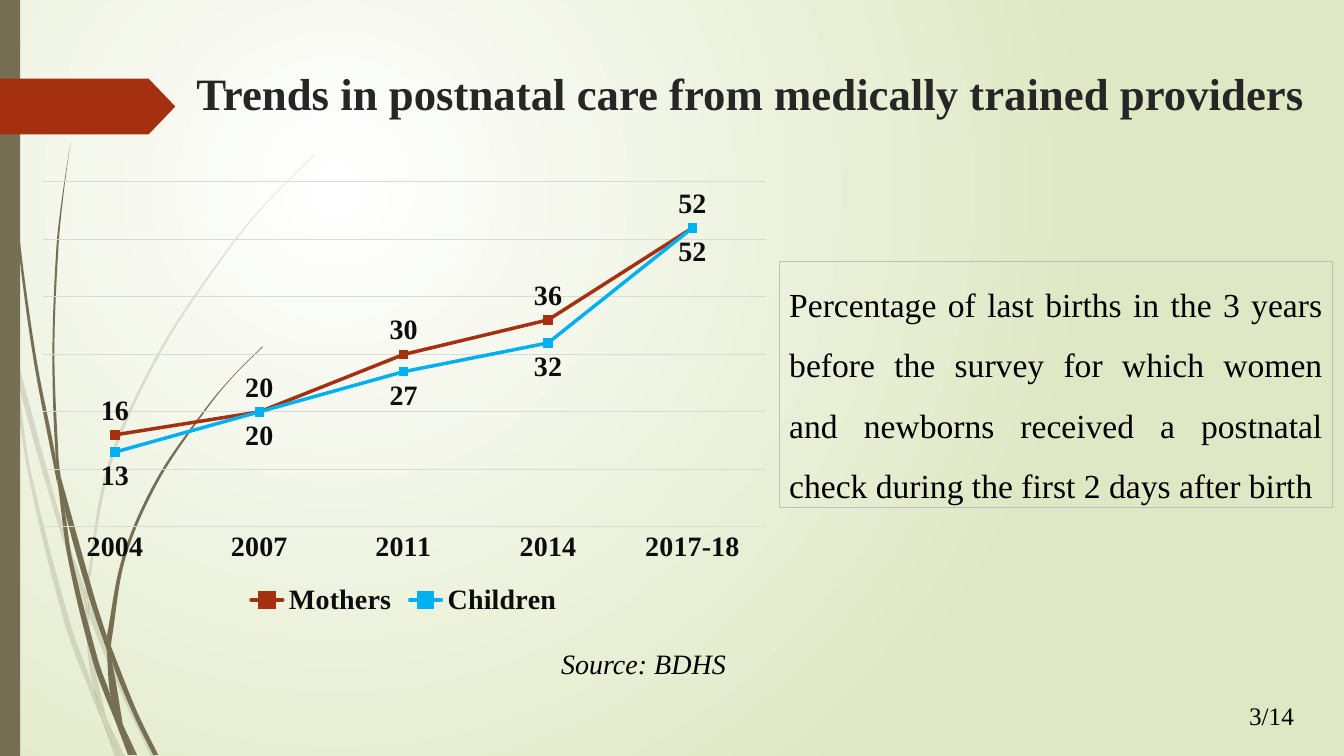
from lxml import etree
from pptx import Presentation
from pptx.chart.data import CategoryChartData
from pptx.dml.color import RGBColor
from pptx.enum.chart import (XL_CHART_TYPE, XL_LABEL_POSITION, XL_LEGEND_POSITION,
                             XL_MARKER_STYLE, XL_TICK_MARK)
from pptx.enum.shapes import MSO_SHAPE
from pptx.enum.text import MSO_ANCHOR, MSO_AUTO_SIZE, PP_ALIGN
from pptx.oxml.ns import qn
from pptx.util import Cm, Pt

RECT, ARROW = MSO_SHAPE.RECTANGLE, MSO_SHAPE.PENTAGON
LINE, SQUARE, NONE = XL_CHART_TYPE.LINE_MARKERS, XL_MARKER_STYLE.SQUARE, XL_TICK_MARK.NONE
ABOVE, BELOW = XL_LABEL_POSITION.ABOVE, XL_LABEL_POSITION.BELOW
BOTTOM, MIDDLE = XL_LEGEND_POSITION.BOTTOM, MSO_ANCHOR.MIDDLE
FIT = MSO_AUTO_SIZE.SHAPE_TO_FIT_TEXT
LEFT, CENTER, JUSTIFY = PP_ALIGN.LEFT, PP_ALIGN.CENTER, PP_ALIGN.JUSTIFY
FONT = "Times New Roman"
OLIVE, RUST, SKY, INK, GRID = "766F54", "A53010", "00B0F0", "0D0D0D", "D9D9D9"
INCH = 2.54


def rgb(code):
    return RGBColor.from_string(code)


def curve(knots):
    """Return knots that run down the slide, with two Bezier handles in each gap."""
    last = len(knots) - 1
    slopes = []
    for i in range(last + 1):
        (x0, y0), (x1, y1) = knots[max(i - 1, 0)], knots[min(i + 1, last)]
        slopes.append((x1 - x0) / (y1 - y0))
    points = [knots[0]]
    for i in range(last):
        (x0, y0), (x1, y1) = knots[i], knots[i + 1]
        third = (y1 - y0) / 3
        points += [(x0 + slopes[i] * third, y0 + third),
                   (x1 - slopes[i + 1] * third, y1 - third), (x1, y1)]
    return [(Cm(x * INCH), Cm(y * INCH)) for x, y in points]


prs = Presentation()
prs.slide_width, prs.slide_height = Cm(33.87), Cm(19.05)
slide = prs.slides.add_slide(prs.slide_layouts[6])
shapes = slide.shapes

# Background: a round glow, upper left
fill = slide.background.fill
fill.gradient()
for stop, color in zip(fill.gradient_stops, ("FFFFFF", "DFE8C4")):
    stop.color.rgb = rgb(color)
lin = slide.element.find(".//" + qn("a:lin"))
glow = etree.Element(qn("a:path"), path="circle")
etree.SubElement(glow, qn("a:fillToRect"), l="50000", t="50000", r="100000", b="100000")
lin.getparent().replace(lin, glow)

# Grass: left and right edge of each piece, in inches
pale = [
    ([(0, 2.99), (.11, 3.5)], [(0, 2.82), (.09, 3.22), (.11, 3.5)]),
    ([(.14, 3.45), (.17, 3.76), (.58, 5.22), (.84, 5.99)],
     [(.14, 3.45), (.62, 5.2), (.85, 5.86)]),
    ([(.88, 5.96), (.88, 6.1), (1.23, 6.94), (1.5, 7.51)],
     [(.88, 5.96), (1.27, 6.92), (1.55, 7.51)]),
    ([(1.05, 7.11), (1.19, 7.51)], [(1.05, 7.11), (1.24, 7.51)]),
    ([(.11, 3.5), (.28, 4.7), (.65, 6.21), (.92, 6.93), (1.01, 7.14)],
     [(.11, 3.5), (.17, 3.76), (.31, 4.69), (.7, 6.19), (.93, 6.83), (1.01, 7.14)]),
    ([(.84, 5.99), (.87, 6.46), (.93, 6.83), (1.05, 7.11)],
     [(.84, 5.99), (.88, 6.1), (.91, 6.46), (1.05, 7.11)]),
    ([(3.12, 1.53), (2.68, 1.97), (2.28, 2.44), (1.58, 3.48), (1.07, 4.61), (.85, 5.86)],
     [(3.12, 1.54), (2.68, 1.98), (2.29, 2.45), (1.6, 3.49), (1.1, 4.62),
      (.88, 5.84), (.88, 5.96)]),
    ([(1.01, 7.14), (1.14, 7.51)], [(1.01, 7.14), (1.19, 7.51)]),
    ([(.85, 5.86), (.84, 5.99), (.88, 6.1)], [(.85, 5.86), (.88, 5.96), (.88, 6.1)]),
    ([(.93, 6.83), (1.01, 7.14), (1.19, 7.51)], [(.93, 6.83), (1.05, 7.11), (1.19, 7.51)]),
]
dark = [
    ([(.03, 0), (.07, 1.1), (.17, 2.33), (.33, 3.55), (.57, 4.81)],
     [(.04, 0), (.08, 1.09), (.19, 2.32), (.36, 3.55), (.55, 4.53), (.57, 4.81)]),
    ([(.6, 4.72), (.64, 5.05), (.88, 5.92), (1.06, 6.45)],
     [(.6, 4.72), (.93, 5.9), (1.06, 6.31)]),
    ([(1.1, 6.41), (1.11, 6.56), (1.32, 7.08), (1.52, 7.49)],
     [(1.1, 6.41), (1.36, 7.06), (1.57, 7.49)]),
    ([(.57, 4.77), (.68, 5.57), (.93, 6.59), (1.17, 7.22)],
     [(.57, 4.77), (.64, 5.05), (.72, 5.56), (.98, 6.57), (1.1, 6.91), (1.17, 7.22)]),
    ([(.7, 1.41), (.62, 1.93), (.56, 2.45), (.52, 3.49), (.55, 4.49), (.6, 4.72)],
     [(.7, 1.41), (.63, 1.93), (.58, 2.45), (.54, 3.49), (.58, 4.53), (.6, 4.72)]),
    ([(1.22, 7.19), (1.33, 7.49)], [(1.22, 7.19), (1.36, 7.49)]),
    ([(.55, 4.49), (.57, 4.77), (.64, 5.05)], [(.55, 4.49), (.6, 4.72), (.64, 5.05)]),
    ([(2.6, 3.44), (2.31, 3.73), (2.04, 4.05), (1.56, 4.74), (1.22, 5.51), (1.06, 6.31)],
     [(2.61, 3.44), (2.31, 3.74), (2.05, 4.06), (1.58, 4.76), (1.25, 5.52),
      (1.11, 6.33), (1.1, 6.41)]),
    ([(1.17, 7.22), (1.27, 7.49)], [(1.17, 7.22), (1.31, 7.49)]),
    ([(1.06, 6.45), (1.1, 6.91), (1.22, 7.19)], [(1.06, 6.45), (1.11, 6.56), (1.22, 7.19)]),
    ([(1.06, 6.31), (1.06, 6.45), (1.11, 6.56)], [(1.06, 6.31), (1.1, 6.41), (1.11, 6.56)]),
    ([(1.1, 6.91), (1.17, 7.22), (1.3, 7.49)], [(1.1, 6.91), (1.22, 7.19), (1.33, 7.49)]),
]
for alpha, pieces in ((20, pale), (100, dark)):
    for left, right in pieces:
        down, up = curve(left), curve(right)[::-1]
        pen = shapes.build_freeform(*down[0])
        pen.add_line_segments(down[1:] + up)
        blade = pen.convert_to_shape()
        nodes = list(blade.element.iter(qn("a:lnTo")))
        cap = len(down) - 1
        bends = nodes[:cap] + nodes[cap + 1:cap + len(up)]
        for first, second, third in zip(bends[::3], bends[1::3], bends[2::3]):
            bend = etree.Element(qn("a:cubicBezTo"))
            first.addprevious(bend)
            for node in (first, second, third):
                bend.append(node[0])
                node.getparent().remove(node)
        blade.shadow.inherit = False
        blade.line.fill.background()
        blade.fill.solid()
        blade.fill.fore_color.rgb = rgb(OLIVE)
        if alpha < 100:
            tint = blade.element.spPr.find(".//" + qn("a:srgbClr"))
            etree.SubElement(tint, qn("a:alpha"), val=str(alpha * 1000))

# Side bar and title arrow
for kind, top, width, height, color in [(RECT, 0, 0.51, 19.05, OLIVE),
                                        (ARROW, 1.98, 4.42, 1.41, RUST)]:
    band = shapes.add_shape(kind, 0, Cm(top), Cm(width), Cm(height))
    band.shadow.inherit = False
    band.fill.solid()
    band.fill.fore_color.rgb = rgb(color)
    band.line.fill.background()
band.adjustments[0] = 0.48

# Chart
data = CategoryChartData()
data.categories = ["2004", "2007", "2011", "2014", "2017-18"]
data.add_series("Mothers", (16, 20, 30, 36, 52))
data.add_series("Children", (13, 20, 27, 32, 52))
chart = shapes.add_chart(LINE, Cm(0.7), Cm(4.36), Cm(18.95), Cm(11.3), data).chart
chart.has_title = False
chart.has_legend = True
chart.legend.position = BOTTOM
chart.legend.include_in_layout = False
years, scale = chart.category_axis, chart.value_axis
years.major_tick_mark = NONE
scale.visible = False
scale.minimum_scale, scale.maximum_scale, scale.major_unit = 0, 60, 10
for line in (years.format.line, scale.major_gridlines.format.line):
    line.color.rgb = rgb(GRID)
    line.width = Pt(0.75)
plot = chart.plots[0]
plot.vary_by_categories = False
fonts = [chart.font, chart.legend.font, years.tick_labels.font]
looks = [(RUST, RUST, ABOVE), (SKY, "0070C0", BELOW)]
for series, (color, dot, place) in zip(plot.series, looks):
    series.smooth = False
    series.format.line.color.rgb = rgb(color)
    series.format.line.width = Pt(2.5)
    series.format.line._get_or_add_ln().set("cap", "rnd")
    mark = series.marker
    mark.style, mark.size = SQUARE, 6
    mark.format.fill.solid()
    mark.format.fill.fore_color.rgb = rgb(dot)
    mark.format.line.color.rgb = rgb(dot)
    labels = series.data_labels
    labels.show_value = True
    labels.position = place
    fonts.append(labels.font)
for font in fonts:
    font.name, font.size, font.bold = FONT, Pt(20), True
    font.color.rgb = rgb(INK)

# Texts
note = shapes.add_shape(RECT, Cm(19.64), Cm(6.58), Cm(13.94), Cm(6.22))
note.shadow.inherit = False
note.fill.background()
note.line.color.rgb = rgb("BFBFBF")
note.line.width = Pt(0.75)
title = shapes.add_textbox(Cm(4.7), Cm(1.47), Cm(28.88), Cm(1.75))
source = shapes.add_textbox(Cm(13.89), Cm(16.17), Cm(4.8), Cm(1.11))
page = shapes.add_textbox(Cm(31.18), Cm(17.53), Cm(1.73), Cm(1.02))
texts = [
    (title, "Trends in postnatal care from medically trained providers",
     32, "262626", JUSTIFY, True, False),
    (note, "Percentage of last births in the 3 years before the survey for which women "
     "and newborns received a postnatal check during the first 2 days after birth",
     24, "000000", JUSTIFY, False, False),
    (source, "Source: BDHS", 20, "000000", LEFT, False, True),
    (page, "3/14", 18, "000000", CENTER, False, False),
]
for box, words, size, color, align, bold, slant in texts:
    frame = box.text_frame
    frame.word_wrap = True
    if box is title:
        frame.vertical_anchor = MIDDLE
    else:
        frame.auto_size = FIT
    para = frame.paragraphs[0]
    para.alignment = align
    run = para.add_run()
    run.text = words
    font = run.font
    font.name, font.size, font.bold, font.italic = FONT, Pt(size), bold, slant
    font.color.rgb = rgb(color)
note.text_frame.paragraphs[0].line_spacing = 1.5

prs.save("out.pptx")
